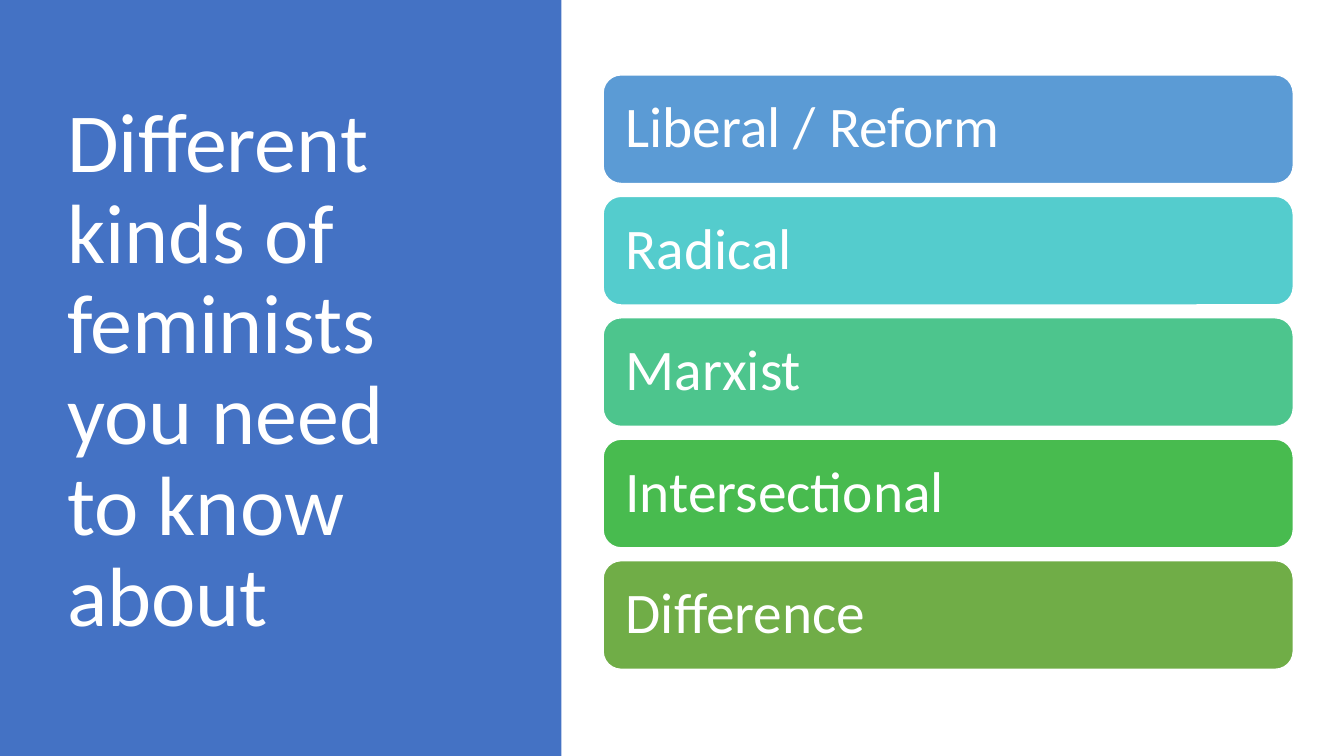
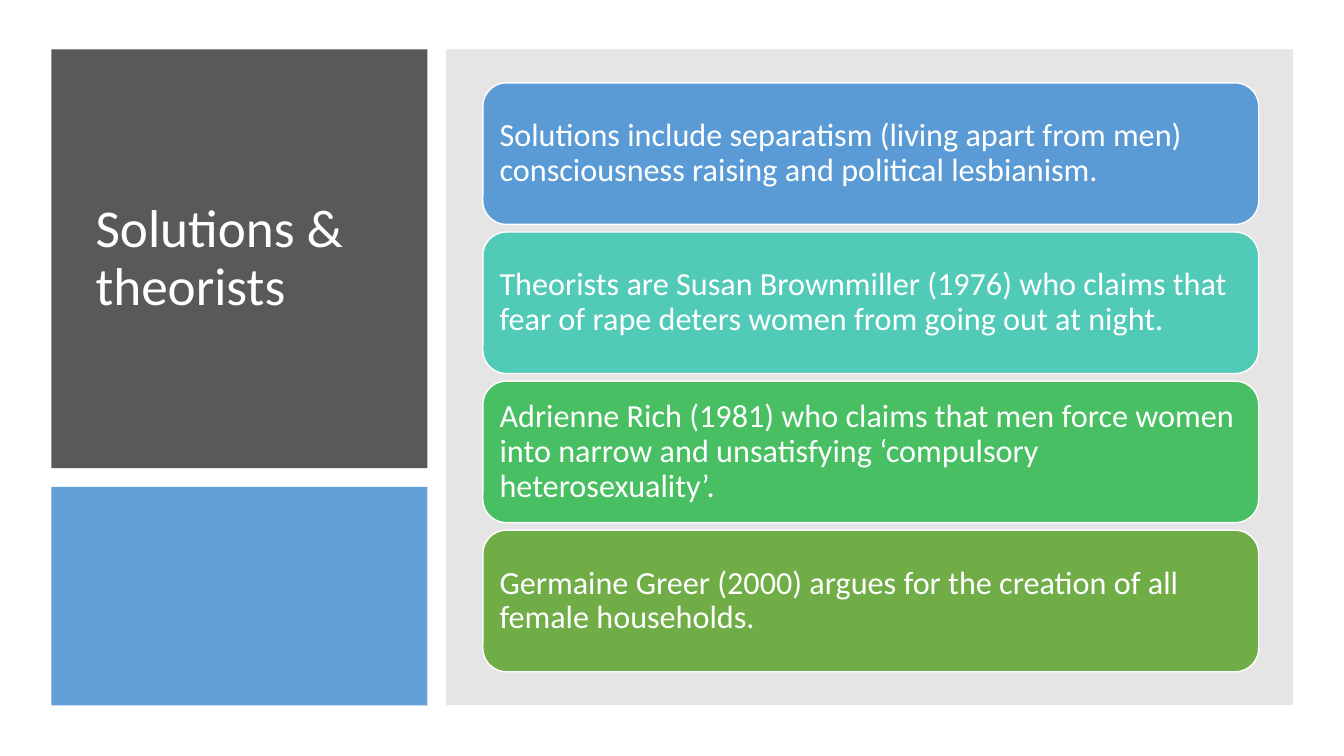
import pptx
import pptx.util
import pptx.dml.color
import pptx.enum.shapes
import pptx.enum.text
import pptx.oxml

Pt = pptx.util.Pt
SHAPES = pptx.enum.shapes.MSO_SHAPE
TEXT = pptx.enum.text

WHITE = "FFFFFF"
FONT = "Calibri"
PAGE_SIZE = (960, 540)

SLIDES = [
    {
        "title": ("Different kinds of feminists you need to know about", (41, 49, 299.5, 433.5), 60),
        "panels": [((0, 0, 401, 540), "4472C4", 100)],
        "cards": [
            ("Liberal / Reform", "5B9BD5"),
            ("Radical", "54CCCD"),
            ("Marxist", "4DC58D"),
            ("Intersectional", "48BB4F"),
            ("Difference", "70AD47"),
        ],
        "stack": {"box": (430.8, 53.5, 493, 77.6), "gap": 9.15, "inset": 12.3, "size": 41},
    },
    {
        "title": ("Solutions & theorists", (61.2, 57.6, 224, 255), 38),
        "panels": [
            ((36.7, 35.3, 268.6, 299.2), "595959", 100),
            ((36.7, 347.8, 268.6, 156), "5B9BD5", 95),
            ((318.5, 35.3, 605.3, 468.5), "808080", 20),
        ],
        "cards": [
            ("Solutions include separatism (living apart from men) consciousness raising "
             "and political lesbianism.", "5B9BD5"),
            ("Theorists are Susan Brownmiller (1976) who claims that fear of rape deters "
             "women from going out at night.", "52CAB8"),
            ("Adrienne Rich (1981) who claims that men force women into narrow and "
             "unsatisfying ‘compulsory heterosexuality’.", "49BF64"),
            ("Germaine Greer (2000) argues for the creation of all female households.", "70AD47"),
        ],
        "stack": {"box": (344.9, 59.2, 554.2, 101.1), "gap": 5.4, "inset": 7, "size": 23},
    },
]


def color(value):
    return pptx.dml.color.RGBColor.from_string(value)


def apply(target, formats):
    for name, value in formats.items():
        setattr(target, name, value)


def lengths(box):
    return [Pt(value) for value in box]


def write(shape, text, size, margins):
    frame = shape.text_frame
    apply(frame, {"word_wrap": True, "vertical_anchor": TEXT.MSO_ANCHOR.MIDDLE})
    apply(frame, {f"margin_{side}": Pt(value)
                  for side, value in zip(("left", "top", "right", "bottom"), margins)})
    para = frame.paragraphs[0]
    apply(para, {"alignment": TEXT.PP_ALIGN.LEFT, "line_spacing": 0.9})
    span = para.add_run()
    span.text = text
    apply(span.font, {"name": FONT, "size": Pt(size)})
    span.font.color.rgb = color(WHITE)


def add_box(page, kind, box, fill, opacity=100):
    shape = page.shapes.add_shape(kind, *lengths(box))
    shape.shadow.inherit = False
    shape.fill.solid()
    shape.fill.fore_color.rgb = color(fill)
    shape.line.fill.background()
    if opacity < 100:
        tint = shape.fill._xPr.find(".//" + pptx.oxml.ns.qn("a:srgbClr"))
        alpha = tint.makeelement(pptx.oxml.ns.qn("a:alpha"), {"val": str(opacity * 1000)})
        tint.append(alpha)
    return shape


def add_title(page, text, box, size):
    write(page.shapes.add_textbox(*lengths(box)), text, size, (7.2, 3.6, 7.2, 3.6))


def add_cards(page, cards, box, gap, inset, size):
    left, top, width, height = box
    for row, (text, fill) in enumerate(cards):
        place = (left, top + row * (height + gap), width, height)
        card = add_box(page, SHAPES.ROUNDED_RECTANGLE, place, fill)
        card.line.color.rgb = color(WHITE)
        card.line.width = Pt(1)
        write(card, text, size, [inset] * 4)


def main():
    deck = pptx.Presentation()
    apply(deck, dict(zip(("slide_width", "slide_height"), lengths(PAGE_SIZE))))
    for content in SLIDES:
        page = deck.slides.add_slide(deck.slide_layouts[6])
        for box, fill, opacity in content["panels"]:
            add_box(page, SHAPES.RECTANGLE, box, fill, opacity)
        add_title(page, *content["title"])
        add_cards(page, content["cards"], **content["stack"])
    deck.save("out.pptx")


if __name__ == "__main__":
    main()
